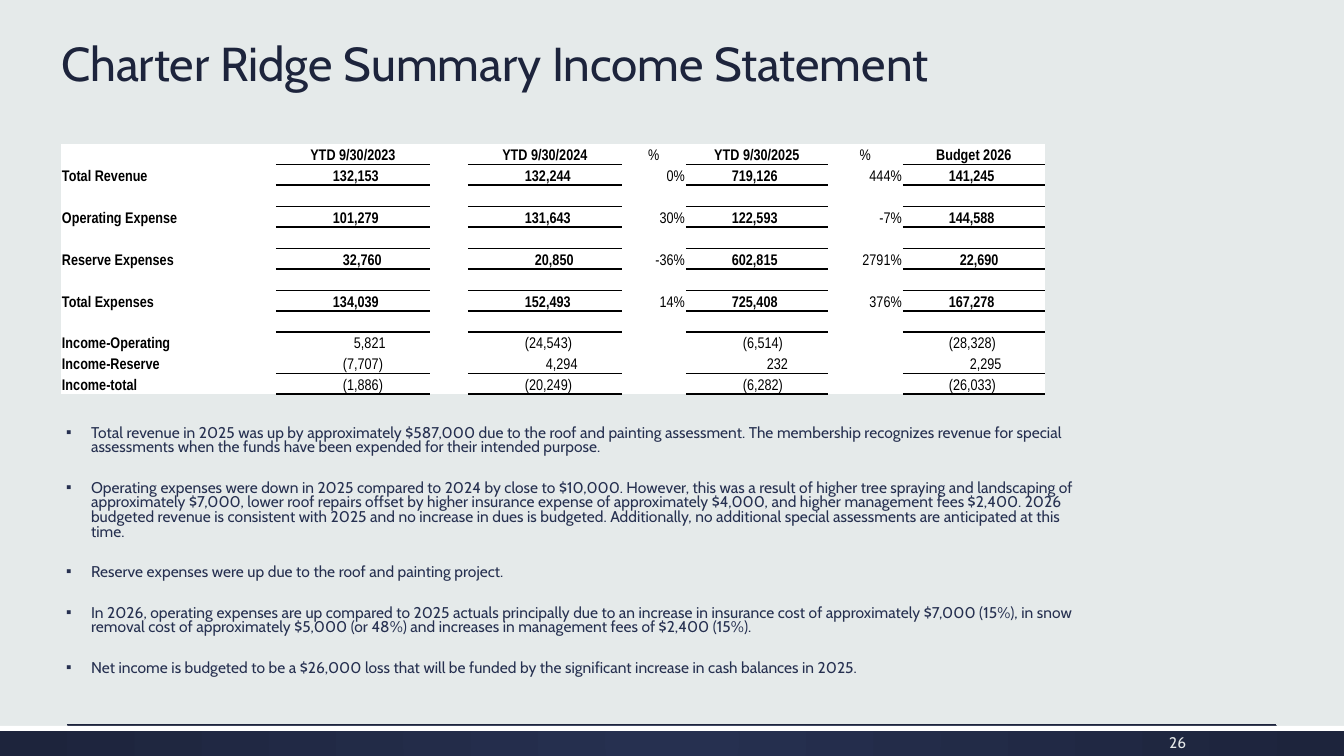
from dataclasses import dataclass

from lxml.etree import SubElement
from pptx import Presentation
from pptx.dml.color import RGBColor
from pptx.enum.shapes import MSO_CONNECTOR, MSO_SHAPE
from pptx.enum.text import MSO_ANCHOR as Anchor, MSO_AUTO_SIZE as AutoSize, PP_ALIGN as Align
from pptx.oxml import parse_xml
from pptx.oxml.ns import nsdecls, qn
from pptx.util import Pt


@dataclass(frozen=True)
class Theme:
    """Colours, fonts and type sizes of the slide."""
    page: str = "E5EAEA"
    ink: str = "1D243C"
    navy: str = "263050"
    white: str = "FFFFFF"
    black: str = "000000"
    number: str = "E5E8E8"
    font: str = "Cabin"
    table_font: str = "Arial Narrow"
    title_size: float = 34
    body_size: float = 11.1
    small_size: float = 11
    thin: float = 0.5
    thick: float = 2


THEME = Theme()
PX = 914400 / 100.8
WIDTH, HEIGHT = 1344, 756
NO_GRID_STYLE = "{2D5ABB26-0587-4C30-8999-92F81FD0307C}"

COLUMN_WIDTHS = (215, 154, 38, 154, 64, 142, 75, 142)
ROW_HEIGHTS = (20, 20, *[21] * 8, 20, 21, 21)
RULES = (0, THEME.thin, *[THEME.thick, THEME.thin] * 3, THEME.thick, 0, 0, THEME.thin, THEME.thick)
AMOUNT_COLUMNS = (1, 3, 5, 7)
PERCENT_COLUMNS = (4, 6)
HEADER_ROW = 1
HEADINGS = ("", "YTD 9/30/2023", "", "YTD 9/30/2024", "%", "YTD 9/30/2025", "%", "Budget 2026")

# row: label, amounts, amount indents, percentages
STATEMENT = {
    2: ("Total Revenue", ("132,153", "132,244", "719,126", "141,245"), (56, 56, 45, 45), ("0%", "444%")),
    4: ("Operating Expense", ("101,279", "131,643", "122,593", "144,588"), (56, 56, 45, 45), ("30%", "-7%")),
    6: ("Reserve Expenses", ("32,760", "20,850", "602,815", "22,690"), (66, 66, 45, 56), ("-36%", "2791%")),
    8: ("Total Expenses", ("134,039", "152,493", "725,408", "167,278"), (56, 56, 45, 45), ("14%", "376%")),
    10: ("Income-Operating", ("5,821", "(24,543)", "(6,514)", "(28,328)"), (77, 56, 56, 45), ("", "")),
    11: ("Income-Reserve", ("(7,707)", "4,294", "232", "2,295"), (66, 77, 80, 66), ("", "")),
    12: ("Income-total", ("(1,886)", "(20,249)", "(6,282)", "(26,033)"), (66, 56, 56, 45), ("", "")),
}
FIRST_INCOME_ROW = 10

COMMENTS = (
    "Total revenue in 2025 was up by approximately $587,000 due to the roof and painting assessment. "
    "The membership recognizes revenue for special assessments when the funds have been expended for "
    "their intended purpose.",
    "Operating expenses were down in 2025 compared to 2024 by close to $10,000. However, this was a "
    "result of higher tree spraying and landscaping of approximately $7,000, lower roof repairs offset "
    "by higher insurance expense of approximately $4,000, and higher management fees $2,400. 2026 "
    "budgeted revenue is consistent with 2025 and no increase in dues is budgeted. Additionally, no "
    "additional special assessments are anticipated at this time.",
    "Reserve expenses were up due to the roof and painting project.",
    "In 2026, operating expenses are up compared to 2025 actuals principally due to an increase in "
    "insurance cost of approximately $7,000 (15%), in snow removal cost of approximately $5,000 (or 48%) "
    "and increases in management fees of $2,400 (15%).",
    "Net income is budgeted to be a $26,000 loss that will be funded by the significant increase in cash "
    "balances in 2025.",
)


def px(length):
    """Turn pixels into EMU."""
    return round(length * PX)


def rgb(colour):
    """Turn a hex string into a colour."""
    return RGBColor.from_string(colour)


def style(paragraph, size, colour, face=THEME.font, bold=False, align=Align.LEFT):
    """Format a whole paragraph."""
    paragraph.alignment = align
    font = paragraph.font
    font.name, font.size, font.bold = face, Pt(size), bold
    font.color.rgb = rgb(colour)


def place(part, box):
    """Move a part to its box."""
    part.left, part.top, part.width, part.height = map(px, box)


def add_title(slide, box):
    """Fill the title placeholder."""
    title = slide.shapes.title
    place(title, box)
    frame = title.text_frame
    frame.text = "Charter Ridge Summary Income Statement"
    frame.auto_size, frame.vertical_anchor = AutoSize.NONE, Anchor.BOTTOM
    frame.paragraphs[0].line_spacing = 0.9
    style(frame.paragraphs[0], THEME.title_size, THEME.ink)


def add_comments(slide, box):
    """Fill the body placeholder with the bulleted comments."""
    body = slide.placeholders[1]
    place(body, box)
    frame = body.text_frame
    frame.text = "\n".join(COMMENTS)
    frame.auto_size, frame.vertical_anchor = AutoSize.NONE, Anchor.TOP
    for position, comment in enumerate(frame.paragraphs):
        comment.line_spacing = 0.8
        comment.space_before = Pt(18 if position else 0)
        properties = comment._p.get_or_add_pPr()
        properties.set("marL", str(px(30)))
        properties.set("indent", str(px(-25)))
        bullet_colour = SubElement(properties, qn("a:buClr"))
        SubElement(bullet_colour, qn("a:srgbClr"), val=THEME.navy)
        SubElement(properties, qn("a:buChar"), char="▪")
        style(comment, THEME.body_size, THEME.navy)


def rule_cell(cell, top, bottom):
    """Draw the lines above and below a cell."""
    for side, weight in (("lnB", bottom), ("lnT", top)):
        if weight:
            cell._tc.get_or_add_tcPr().insert(0, parse_xml(
                f'<a:{side} {nsdecls("a")} w="{Pt(weight)}"><a:solidFill>'
                f'<a:srgbClr val="{THEME.black}"/></a:solidFill></a:{side}>'))


def fill_cell(cell, text="", bold=False, align=Align.LEFT, indent=0):
    """Write one cell of the statement."""
    cell.margin_left, cell.margin_right = px(1 + indent), px(1)
    cell.margin_top, cell.margin_bottom = px(1), 0
    cell.vertical_anchor = Anchor.BOTTOM
    cell.text = text
    style(cell.text_frame.paragraphs[0], THEME.small_size, THEME.black, THEME.table_font, bold, align)


def add_statement(slide, left, top):
    """Build the income statement table."""
    frame = slide.shapes.add_table(len(ROW_HEIGHTS), len(COLUMN_WIDTHS), px(left), px(top),
                                   px(sum(COLUMN_WIDTHS)), px(sum(ROW_HEIGHTS)))
    table = frame.table
    table.first_row = table.horz_banding = False
    table._tbl.tblPr.find(qn("a:tableStyleId")).text = NO_GRID_STYLE
    for column, width in zip(table.columns, COLUMN_WIDTHS):
        column.width = px(width)
    for number, (row, height) in enumerate(zip(table.rows, ROW_HEIGHTS)):
        row.height = px(height)
        for column, cell in enumerate(row.cells):
            fill_cell(cell)
            if number:
                cell.fill.solid()
                cell.fill.fore_color.rgb = rgb(THEME.white)
            if number and column in AMOUNT_COLUMNS:
                rule_cell(cell, RULES[number - 1], RULES[number])
    for column, heading in enumerate(HEADINGS):
        fill_cell(table.cell(HEADER_ROW, column), heading, heading != "%", Align.CENTER)
    for number, (label, amounts, indents, percentages) in STATEMENT.items():
        fill_cell(table.cell(number, 0), label, True)
        for column, amount, indent in zip(AMOUNT_COLUMNS, amounts, indents):
            fill_cell(table.cell(number, column), amount, number < FIRST_INCOME_ROW, indent=indent)
        for column, percentage in zip(PERCENT_COLUMNS, percentages):
            fill_cell(table.cell(number, column), percentage, align=Align.RIGHT)


def add_footer(slide, top, height):
    """Draw the bottom band, its rule and the page number."""
    band, edge = (slide.shapes.add_shape(MSO_SHAPE.RECTANGLE, 0, px(top), px(WIDTH), px(depth))
                  for depth in (height, 5))
    for strip in (band, edge):
        strip.shadow.inherit = False
        strip.line.fill.background()
    edge.fill.solid()
    edge.fill.fore_color.rgb = rgb(THEME.white)
    band.fill.gradient()
    for stop, colour in zip(band.fill.gradient_stops, (THEME.navy, THEME.ink)):
        stop.color.rgb = rgb(colour)
    gradient = band._element.spPr.find(qn("a:gradFill"))
    gradient.replace(gradient.find(qn("a:lin")), parse_xml(
        f'<a:path {nsdecls("a")} path="circle"><a:fillToRect l="50000" t="50000" r="50000" b="50000"/></a:path>'))

    divider = slide.shapes.add_connector(MSO_CONNECTOR.STRAIGHT, px(67), px(top - 1), px(1276), px(top - 1))
    divider.line.color.rgb = rgb(THEME.ink)
    divider.line.width = Pt(0.75)
    SubElement(divider._element.spPr, qn("a:effectLst"))

    page = slide.shapes.add_textbox(px(1126), px(top + 3), px(70), px(26)).text_frame
    page.word_wrap, page.vertical_anchor = True, Anchor.MIDDLE
    page.text = "26"
    style(page.paragraphs[0], THEME.small_size, THEME.number, align=Align.RIGHT)


def main():
    """Build and save the slide."""
    deck = Presentation()
    deck.slide_width, deck.slide_height = px(WIDTH), px(HEIGHT)
    slide = deck.slides.add_slide(deck.slide_layouts[1])
    slide.background.fill.solid()
    slide.background.fill.fore_color.rgb = rgb(THEME.page)
    add_footer(slide, 726, 30)
    add_title(slide, (51, 25, 1048, 72))
    add_comments(slide, (51, 421, 1035, 257))
    add_statement(slide, 61, 124)
    deck.save("out.pptx")


if __name__ == "__main__":
    main()
